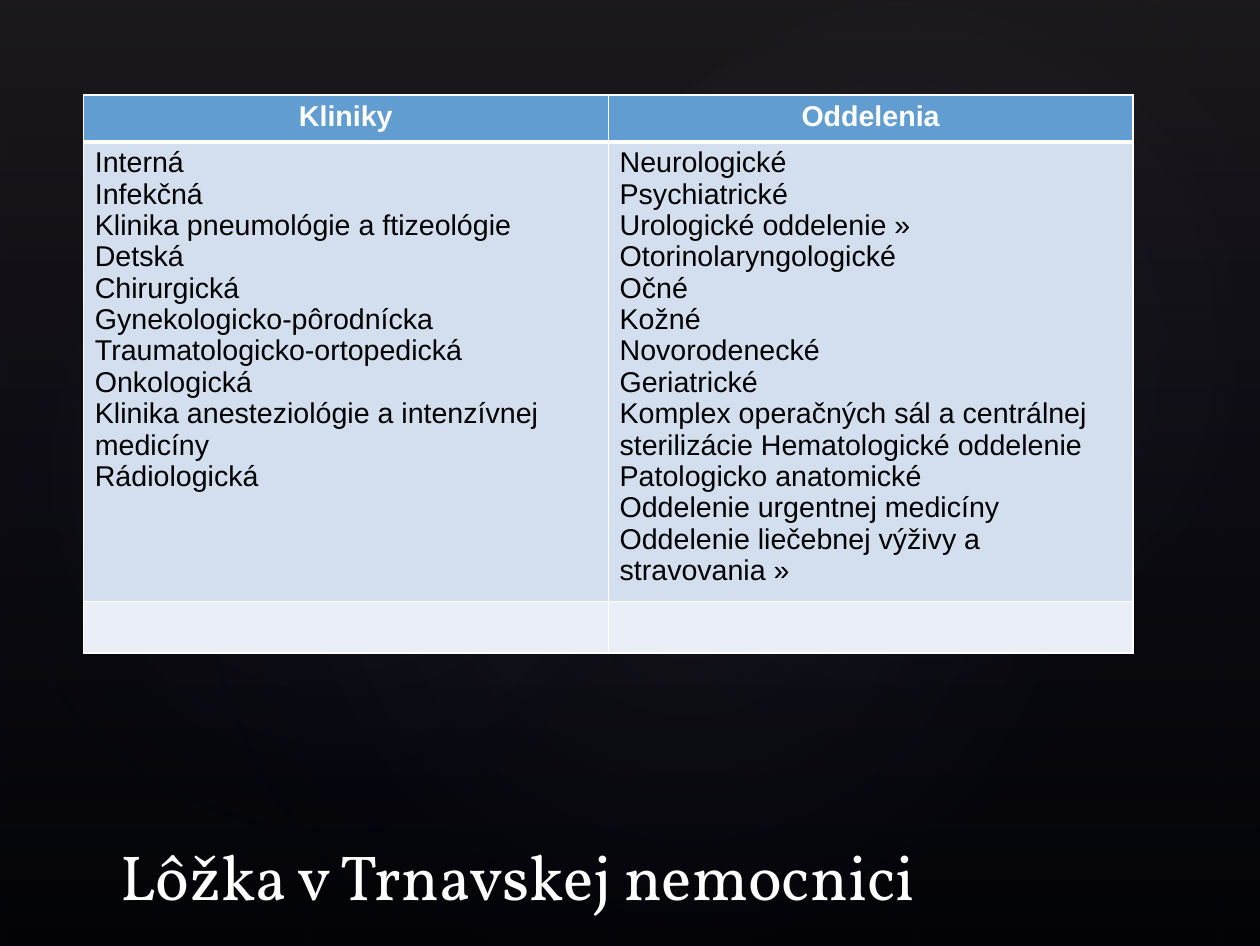
from dataclasses import dataclass

from lxml import etree
from pptx import Presentation
from pptx.dml.color import RGBColor
from pptx.enum import shapes, text
from pptx.oxml import parse_xml
from pptx.oxml.ns import nsdecls, qn
from pptx.util import Inches, Pt

COLORS = {
    "black": "000000",
    "white": "FFFFFF",
    "header": "629DD1",
    "body": "D3DFEE",
    "footer": "EAEFF7",
    "haze": "504652",
    "navy": "242852",
    "glow": "C4BCC6",
}
LINEAR = '<a:lin ang="5400000" scaled="0"/>'
RADIAL = ('<a:path path="circle"><a:fillToRect l="50000" t="50000" '
          'r="50000" b="50000"/></a:path>')


@dataclass
class Stop:
    position: int
    color: str
    opacity: int


@dataclass
class Backdrop:
    kind: shapes.MSO_SHAPE
    box: tuple[float, float, float, float]
    rotation: float
    stops: list[Stop]
    direction: str


@dataclass
class Column:
    heading: str
    wards: list[str]


def glow(box: tuple[float, float, float, float], rotation: float, opacity: int) -> Backdrop:
    stops = [Stop(0, "glow", opacity), Stop(58, "navy", 0)]
    return Backdrop(shapes.MSO_SHAPE.OVAL, box, rotation, stops, RADIAL)


BACKDROPS = [
    Backdrop(shapes.MSO_SHAPE.RECTANGLE, (0, 0, 11.02, 8.27), 0,
             [Stop(0, "haze", 36), Stop(100, "navy", 10)], LINEAR),
    glow((1.65, 1.25, 8.73, 6.88), 328.7, 7),
    glow((-0.33, 1.41, 6.68, 5.4), 294.3, 8),
    glow((3.95, 0.14, 7.81, 5.73), 328.7, 8),
]
COLUMNS = [
    Column("Kliniky", [
        "Interná",
        "Infekčná",
        "Klinika pneumológie a ftizeológie",
        "Detská",
        "Chirurgická",
        "Gynekologicko-pôrodnícka Traumatologicko-ortopedická Onkologická",
        "Klinika anesteziológie a intenzívnej medicíny",
        "Rádiologická",
    ]),
    Column("Oddelenia", [
        "Neurologické",
        "Psychiatrické",
        "Urologické oddelenie »",
        "Otorinolaryngologické",
        "Očné",
        "Kožné",
        "Novorodenecké",
        "Geriatrické",
        "Komplex operačných sál a centrálnej sterilizácie Hematologické oddelenie",
        "Patologicko anatomické",
        "Oddelenie urgentnej medicíny",
        "Oddelenie liečebnej výživy a stravovania »",
    ]),
]
COLUMN_WIDTH = 4.59
ROW_HEIGHTS = [0.41, 4.02, 0.45]


def rgb(name: str) -> RGBColor:
    return RGBColor.from_string(COLORS[name])


def write(tf, lines: list[str], *, size: float, font: str = "Arial", color: str = "black",
          bold: bool = False, align=text.PP_ALIGN.LEFT, spacing: float = 1.0) -> None:
    for i, line in enumerate(lines):
        p = tf.paragraphs[0] if i == 0 else tf.add_paragraph()
        p.alignment, p.line_spacing = align, spacing
        r = p.add_run()
        r.text = line
        r.font.size, r.font.name, r.font.bold = Pt(size), font, bold
        r.font.color.rgb = rgb(color)


def draw_backdrop(s, backdrop: Backdrop) -> None:
    sp = s.shapes.add_shape(backdrop.kind, *map(Inches, backdrop.box))
    sp.rotation = backdrop.rotation
    sp.shadow.inherit = False
    sp.line.fill.background()
    stops = "".join(
        f'<a:gs pos="{stop.position * 1000}"><a:srgbClr val="{COLORS[stop.color]}">'
        f'<a:alpha val="{stop.opacity * 1000}"/></a:srgbClr></a:gs>'
        for stop in backdrop.stops)
    geometry = sp.element.spPr.find(qn("a:prstGeom"))
    geometry.addnext(parse_xml(
        f'<a:gradFill {nsdecls("a")} rotWithShape="1"><a:gsLst>{stops}</a:gsLst>'
        f'{backdrop.direction}</a:gradFill>'))


def style_cell(cell, fill: str, bottom: float = 1, top: float = 1) -> None:
    """Fill the cell and give it white borders, with widths in points."""
    tc_pr = cell._tc.get_or_add_tcPr()
    for side, width in {"lnL": 1, "lnR": 1, "lnT": top, "lnB": bottom}.items():
        ln = etree.SubElement(tc_pr, qn(f"a:{side}"), w=str(Pt(width)))
        solid = etree.SubElement(ln, qn("a:solidFill"))
        etree.SubElement(solid, qn("a:srgbClr"), val=COLORS["white"])
    cell.fill.solid()
    cell.fill.fore_color.rgb = rgb(fill)


def draw_table(s) -> None:
    frame = s.shapes.add_table(len(ROW_HEIGHTS), len(COLUMNS), Inches(0.73), Inches(0.83),
                               Inches(COLUMN_WIDTH * len(COLUMNS)), Inches(sum(ROW_HEIGHTS)))
    table = frame.table
    for row, height in zip(table.rows, ROW_HEIGHTS):
        row.height = Inches(height)
    for i, column in enumerate(COLUMNS):
        table.columns[i].width = Inches(COLUMN_WIDTH)
        heading, wards, footer = (table.cell(row, i) for row in range(len(ROW_HEIGHTS)))
        style_cell(heading, "header", bottom=3)
        style_cell(wards, "body", top=3)
        style_cell(footer, "footer")
        write(heading.text_frame, [column.heading], size=18, color="white", bold=True,
              align=text.PP_ALIGN.CENTER)
        write(wards.text_frame, column.wards, size=18, spacing=0.98)


def draw_title(s) -> None:
    box = s.shapes.add_textbox(Inches(0.94), Inches(6.94), Inches(9.09), Inches(1.1))
    tf = box.text_frame
    tf.word_wrap = True
    tf.vertical_anchor = text.MSO_ANCHOR.BOTTOM
    tf.margin_left = tf.margin_right = Inches(0.11)
    tf.margin_top = tf.margin_bottom = Inches(0.06)
    write(tf, ["Lôžka v Trnavskej nemocnici"], size=40, font="Vollkorn", color="white")


def main() -> None:
    prs = Presentation()
    prs.slide_width, prs.slide_height = Inches(11.02), Inches(8.27)
    s = prs.slides.add_slide(prs.slide_layouts[6])
    s.background.fill.solid()
    s.background.fill.fore_color.rgb = rgb("black")
    for backdrop in BACKDROPS:
        draw_backdrop(s, backdrop)
    draw_table(s)
    draw_title(s)
    prs.save("out.pptx")


if __name__ == "__main__":
    main()
